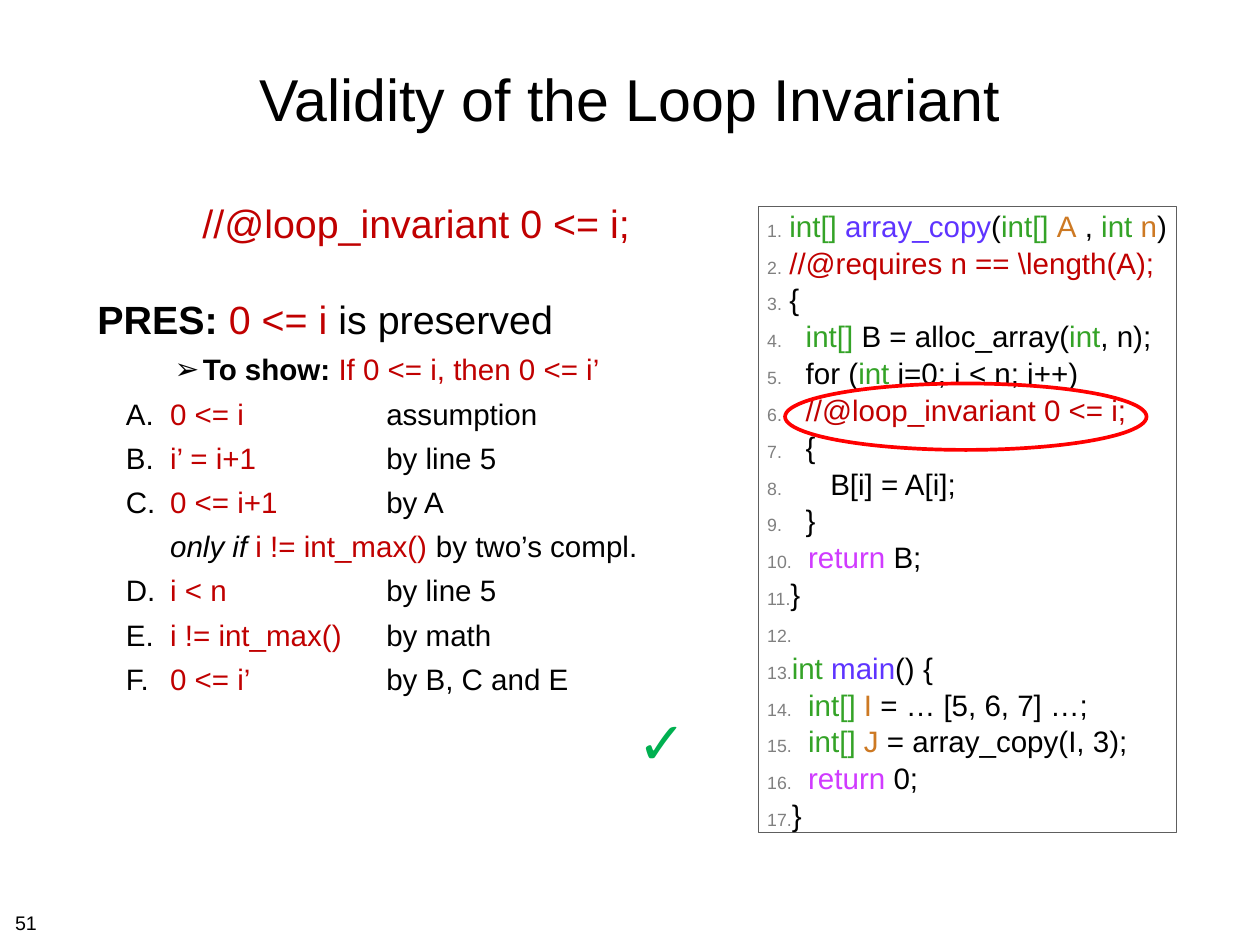
from lxml.etree import SubElement
from pptx import Presentation
from pptx.dml.color import RGBColor
from pptx.enum.shapes import MSO_SHAPE
from pptx.enum.text import MSO_ANCHOR, MSO_AUTO_SIZE, PP_ALIGN
from pptx.oxml.ns import qn
from pptx.util import Inches, Pt

BLACK, RED, GREEN = "000000", "C00000", "34A327"
BLUE, ORANGE, PURPLE, GRAY = "5E34FF", "CD7923", "D03BFF", "808080"

# Each code line is a list of (text, colour) tokens.
CODE = [
    [("int[] ", GREEN), ("array_copy", BLUE), ("(", BLACK), ("int[] ", GREEN),
     ("A", ORANGE), (" , ", BLACK), ("int ", GREEN), ("n", ORANGE), (")", BLACK)],
    [("//@requires n == \\length(A);", RED)],
    [("{", BLACK)],
    [("  ", BLACK), ("int[]", GREEN), (" B = alloc_array(", BLACK),
     ("int", GREEN), (", n);", BLACK)],
    [("  for (", BLACK), ("int ", GREEN), ("i=0; i < n; i++)", BLACK)],
    [("  //@loop_invariant 0 <= i;", RED)],
    [("  {", BLACK)],
    [("     B[i] = A[i];", BLACK)],
    [("  }", BLACK)],
    [("  return", PURPLE), (" B;", BLACK)],
    [("}", BLACK)],
    [(" ", GREEN)],
    [("int ", GREEN), ("main", BLUE), ("() {", BLACK)],
    [("  ", BLACK), ("int[] ", GREEN), ("I", ORANGE), (" = … [5, 6, 7] …;", BLACK)],
    [("  ", BLACK), ("int[] ", GREEN), ("J", ORANGE), (" = array_copy(I, 3);", BLACK)],
    [("  return", PURPLE), (" 0;", BLACK)],
    [("}", BLACK)],
]

# Proof steps: (claim, reason, first number of the list)
STEPS_BEFORE = [("0 <= i", "assumption", 1), ("i’ = i+1", "by line 5", 1),
                ("0 <= i+1", "by A", 1)]
STEPS_AFTER = [("i < n", "by line 5", 4), ("i != int_max()", "by math", 4),
               ("0 <= i’", "by B, C and E", 4)]


def rgb(color):
    return RGBColor.from_string(color)


def add_run(p, text, size, color, bold=False, italic=False):
    r = p.add_run()
    r.text = text
    f = r.font
    f.name, f.size, f.bold, f.italic = "Arial", Pt(size), bold, italic
    f.color.rgb = rgb(color)


def next_paragraph(tf):
    """Return the first paragraph while it is unused, then a new one."""
    first = tf.paragraphs[0]
    return tf.add_paragraph() if first.runs else first


def format_paragraph(p, left=0, hang=0, before=0, level=0, align=PP_ALIGN.LEFT):
    p.level, p.alignment = level, align
    p.space_before, p.line_spacing = Pt(before), 1.04
    pPr = p._p.get_or_add_pPr()
    pPr.set("marL", str(Inches(left)))
    pPr.set("indent", str(Inches(-hang)))


def set_bullet(p, char=None, number=None, start=1, color=BLACK, percent=100):
    """Give the paragraph a character, a number, or no bullet."""
    pPr = p._p.get_or_add_pPr()
    if not (char or number):
        SubElement(pPr, qn("a:buNone"))
        return
    clr = SubElement(pPr, qn("a:buClr"))
    SubElement(clr, qn("a:srgbClr"), val=color)
    SubElement(pPr, qn("a:buSzPct"), val=str(percent * 1000))
    SubElement(pPr, qn("a:buFont"), typeface="Arial")
    if char:
        SubElement(pPr, qn("a:buChar"), char=char)
    else:
        SubElement(pPr, qn("a:buAutoNum"), type=number, startAt=str(start))


def set_tab(p, position):
    tabs = SubElement(p._p.get_or_add_pPr(), qn("a:tabLst"))
    SubElement(tabs, qn("a:tab"), pos=str(Inches(position)), algn="l")


def set_frame(tf, inset, wrap=True, anchor=MSO_ANCHOR.TOP):
    tf.auto_size, tf.word_wrap = MSO_AUTO_SIZE.NONE, wrap
    tf.vertical_anchor = anchor
    tf.margin_left = tf.margin_right = Inches(inset)
    tf.margin_top = tf.margin_bottom = Inches(inset)


def place(sp, left, top, width, height):
    sp.left, sp.top = Inches(left), Inches(top)
    sp.width, sp.height = Inches(width), Inches(height)


def add_outline(s, kind, box, color, width):
    sp = s.shapes.add_shape(kind, *map(Inches, box))
    sp.shadow.inherit = False
    sp.fill.background()
    sp.line.color.rgb = rgb(color)
    sp.line.width = Pt(width)
    return sp


def add_label(s, box, text, size, color, inset, bold=False, align=PP_ALIGN.LEFT):
    tf = s.shapes.add_textbox(*map(Inches, box)).text_frame
    set_frame(tf, inset, wrap=False)
    p = tf.paragraphs[0]
    p.alignment = align
    add_run(p, text, size, color, bold)


def fill_title(sp):
    place(sp, 1.04, 0.28, 12.14, 1.64)
    set_frame(sp.text_frame, 0.06, anchor=MSO_ANCHOR.MIDDLE)
    p = sp.text_frame.paragraphs[0]
    p.alignment = PP_ALIGN.CENTER
    add_run(p, "Validity of the Loop Invariant", 48, BLACK)


def add_steps(tf, steps):
    for claim, reason, start in steps:
        p = next_paragraph(tf)
        format_paragraph(p, 0.82, 0.5, before=6, level=2)
        set_bullet(p, number="alphaUcPeriod", start=start)
        set_tab(p, 3.26)
        add_run(p, claim, 24, RED)
        add_run(p, "\t" + reason, 24, BLACK)


def fill_proof(sp):
    place(sp, 1.04, 2.17, 7.32, 7.54)
    tf = sp.text_frame
    set_frame(tf, 0.06)

    p = next_paragraph(tf)
    format_paragraph(p, align=PP_ALIGN.CENTER)
    set_bullet(p)
    add_run(p, "//@loop_invariant 0 <= i;", 32, RED)

    p = next_paragraph(tf)
    format_paragraph(p, 0.5, 0.5, before=38, level=1)
    set_bullet(p)
    add_run(p, "PRES: ", 32, BLACK, bold=True)
    add_run(p, "0 <= i", 32, RED)
    add_run(p, " is preserved", 32, BLACK)

    p = next_paragraph(tf)
    format_paragraph(p, 1.19, 0.32, before=6, level=2)
    set_bullet(p, char="➢")
    add_run(p, "To show: ", 24, BLACK, bold=True)
    add_run(p, "If 0 <= i, then 0 <= i’", 24, RED)

    add_steps(tf, STEPS_BEFORE)
    p = next_paragraph(tf)
    format_paragraph(p, 0.82, 0.5, before=6, level=2)
    set_bullet(p)
    add_run(p, "\tonly if ", 24, BLACK, italic=True)
    add_run(p, "i != int_max() ", 24, RED)
    add_run(p, "\tby two’s compl.", 24, BLACK)
    add_steps(tf, STEPS_AFTER)


def add_code(s):
    sp = add_outline(s, MSO_SHAPE.RECTANGLE, (8.56, 2.33, 4.72, 7.07), "5E5E5E", 1)
    tf = sp.text_frame
    set_frame(tf, 0.1, wrap=False, anchor=MSO_ANCHOR.MIDDLE)
    for tokens in CODE:
        p = next_paragraph(tf)
        format_paragraph(p, 0.25, 0.25)
        set_bullet(p, number="arabicPeriod", color=GRAY, percent=60)
        for text, color in tokens:
            add_run(p, text, 24, color)


def main():
    prs = Presentation()
    prs.slide_width, prs.slide_height = Inches(14.22), Inches(10.67)
    s = prs.slides.add_slide(prs.slide_layouts[1])
    fill_title(s.shapes.title)
    fill_proof(s.placeholders[1])
    add_code(s)
    add_outline(s, MSO_SHAPE.OVAL, (8.86, 4.33, 4.08, 0.75), "FF0000", 3)
    add_label(s, (7.11, 7.92, 0.72, 0.91), "✓", 48, "00B050", 0.05,
              bold=True, align=PP_ALIGN.CENTER)
    add_label(s, (0.11, 10.23, 0.37, 0.35), "51", 16, BLACK, 0.06)
    prs.save("out.pptx")


if __name__ == "__main__":
    main()
